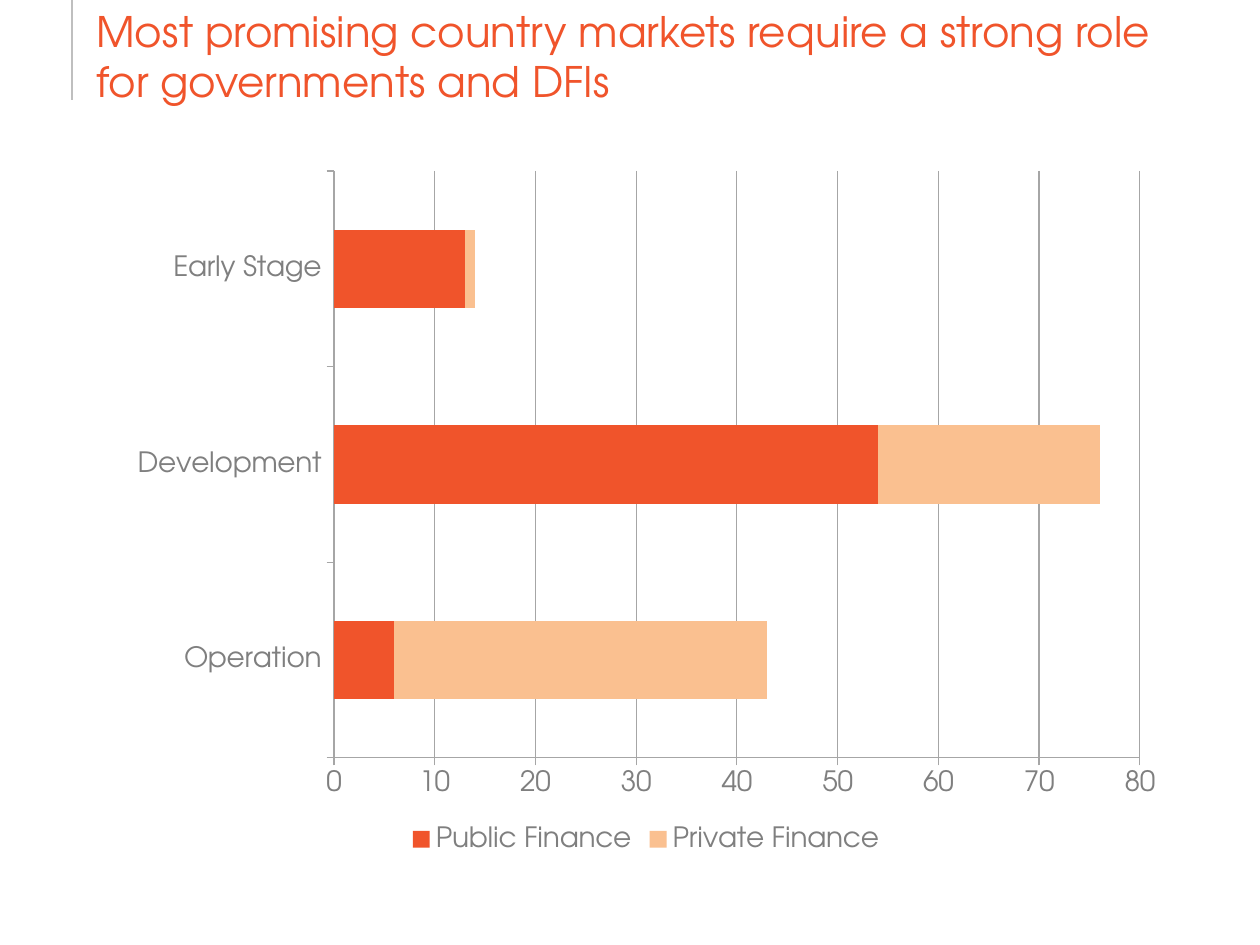
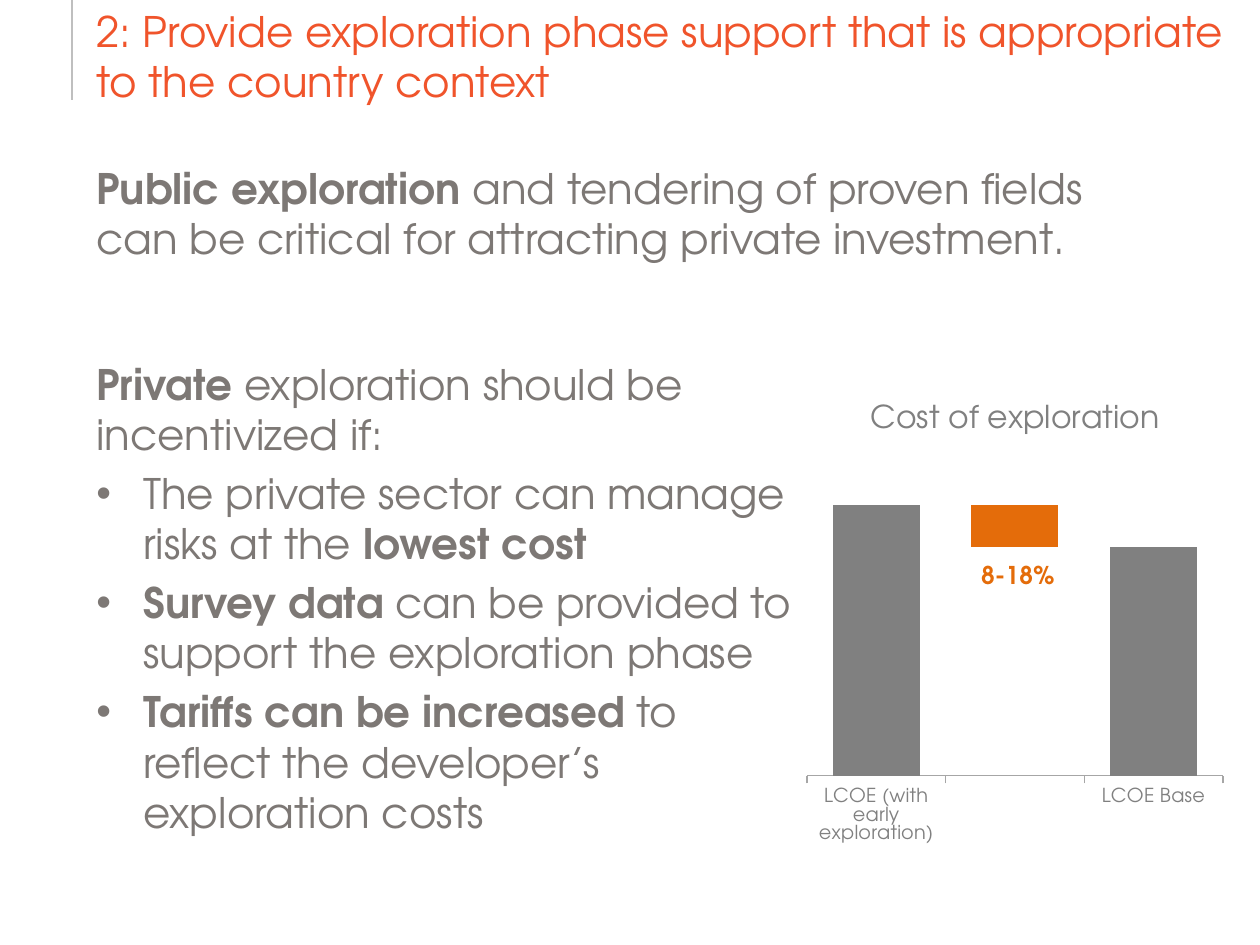
from dataclasses import dataclass

from lxml.etree import SubElement
from pptx import Presentation
from pptx.chart.data import CategoryChartData
from pptx.dml.color import RGBColor
from pptx.enum.chart import XL_CHART_TYPE as ChartType
from pptx.enum.chart import XL_LABEL_POSITION as LabelPosition
from pptx.enum.chart import XL_LEGEND_POSITION as LegendPosition
from pptx.enum.chart import XL_TICK_MARK as TickMark
from pptx.enum.shapes import MSO_CONNECTOR as Connector
from pptx.enum.text import MSO_ANCHOR as Anchor
from pptx.oxml.ns import qn
from pptx.util import Emu, Pt


@dataclass(frozen=True)
class Theme:
    font: str = "TeX Gyre Adventor"
    accent: str = "F0542B"
    peach: str = "FAC090"
    orange: str = "E46C0A"
    body: str = "7D7875"
    label: str = "7F7F7F"
    column: str = "808080"
    rule: str = "BFBFBF"
    grid: str = "A6A6A6"
    text_size: float = 24
    chart_size: float = 16
    chart_title_size: float = 18
    callout_size: float = 14
    category_size: float = 11
    text_gap: float = 4.8


THEME = Theme()
EMU_PER_PX = 914400 / 126
FINANCE_FRAME = (116, 156, 1060, 702)
COST_FRAME = (798, 379, 433, 474)


def px(*lengths):
    return [Emu(round(length * EMU_PER_PX)) for length in lengths]


def rgb(color):
    return RGBColor.from_string(color)


def style_font(font, size, color, bold=False):
    font.name = THEME.font
    font.size = Pt(size)
    font.bold = bold
    font.color.rgb = rgb(color)


def add_text_box(page, frame):
    box = page.shapes.add_textbox(*px(*frame))
    box.text_frame.word_wrap = True
    return box.text_frame


def add_title(page, text, width):
    text_frame = add_text_box(page, (84, -5, width, 117))
    text_frame.vertical_anchor = Anchor.BOTTOM
    text_frame.text = text
    style_font(text_frame.paragraphs[0].runs[0].font, THEME.text_size, THEME.accent)


def add_rule(page):
    rule = page.shapes.add_connector(Connector.STRAIGHT, *px(72, 0, 72, 100))
    rule.line.color.rgb = rgb(THEME.rule)
    rule.line.width = Pt(1.25)
    SubElement(rule.element.spPr, qn("a:effectLst"))


def add_page(deck, title, title_width):
    page = deck.slides.add_slide(deck.slide_layouts[6])
    add_rule(page)
    add_title(page, title, title_width)
    return page


def add_bullet(para):
    properties = para._p.get_or_add_pPr()
    indent = px(47)[0]
    properties.set("marL", str(indent))
    properties.set("indent", str(-indent))
    SubElement(properties, qn("a:buFont"), typeface="Arial")
    SubElement(properties, qn("a:buChar"), char="•")


def add_body(page, frame, lead, bullets=()):
    text_frame = add_text_box(page, frame)
    for index, pieces in enumerate([lead, *bullets]):
        para = text_frame.add_paragraph() if index else text_frame.paragraphs[0]
        para.space_before = Pt(THEME.text_gap)
        if index:
            add_bullet(para)
        for text, bold in pieces:
            span = para.add_run()
            span.text = text
            style_font(span.font, THEME.text_size, THEME.body, bold)


def set_layout(parent, index, **settings):
    layout = parent.find(qn("c:layout"))
    if layout is None:
        layout = parent.makeelement(qn("c:layout"))
        parent.insert(index, layout)
    manual = SubElement(layout, qn("c:manualLayout"))
    for name, value in settings.items():
        SubElement(manual, qn(f"c:{name}"), val=str(value))


def add_stacked_chart(page, kind, frame, categories, series, gap, plot_area):
    data = CategoryChartData()
    data.categories = categories
    for name, values, _ in series:
        data.add_series(name, values)
    chart = page.shapes.add_chart(kind, *px(*frame), data).chart
    chart.has_title = False
    chart.has_legend = False
    style_font(chart.font, THEME.chart_size, THEME.label)
    plot = chart.plots[0]
    plot.gap_width, plot.overlap, plot.vary_by_categories = gap, 100, False
    for item, (_, _, color) in zip(plot.series, series):
        item.format.fill.solid()
        item.format.fill.fore_color.rgb = rgb(color)
        item.invert_if_negative = False
    for axis in (chart.category_axis, chart.value_axis):
        axis.major_tick_mark = TickMark.OUTSIDE
        axis.minor_tick_mark = TickMark.NONE
        axis.format.line.color.rgb = rgb(THEME.grid)
    chart.value_axis.minimum_scale = 0
    chart_left, chart_top, chart_width, chart_height = frame
    left, top, width, height = plot_area
    set_layout(chart.element.find(f".//{qn('c:plotArea')}"), 0, layoutTarget="inner",
               xMode="edge", yMode="edge",
               x=(left - chart_left) / chart_width, y=(top - chart_top) / chart_height,
               w=width / chart_width, h=height / chart_height)
    return chart


def add_finance_chart(page):
    chart = add_stacked_chart(
        page, ChartType.BAR_STACKED, FINANCE_FRAME,
        ["Operation", "Development", "Early Stage"],
        [("Public Finance", (6, 54, 13), THEME.accent),
         ("Private Finance", (37, 22, 1), THEME.peach)],
        150, (334, 171, 806, 587))
    axis = chart.value_axis
    axis.maximum_scale, axis.major_unit = 80, 10
    axis.has_major_gridlines = True
    axis.major_gridlines.format.line.color.rgb = rgb(THEME.grid)
    chart.has_legend = True
    chart.legend.position = LegendPosition.BOTTOM
    chart.legend.include_in_layout = False
    style_font(chart.legend.font, THEME.chart_size, THEME.label)


def add_chart_title(chart, text, left, top):
    text_frame = chart.chart_title.text_frame
    text_frame.text = text
    style_font(text_frame.paragraphs[0].runs[0].font, THEME.chart_title_size, THEME.column)
    title = chart.element.find(f".//{qn('c:title')}")
    _, _, width, height = COST_FRAME
    set_layout(title, 1, xMode="edge", yMode="edge", x=left / width, y=top / height)
    title.find(qn("c:overlay")).set("val", "1")


def add_callout(chart, series, point, text, right, down):
    label = series.points[point].data_label
    label.text_frame.text = text
    span = label.text_frame.paragraphs[0].runs[0]
    style_font(span.font, THEME.callout_size, THEME.orange, True)
    label.position = LabelPosition.CENTER
    labels = series.data_labels
    labels.show_value = True
    labels.position = LabelPosition.CENTER
    style_font(labels.font, THEME.callout_size, THEME.orange, True)
    for leader in chart.element.iter(qn("c:showLeaderLines")):
        leader.set("val", "0")
    _, _, width, height = COST_FRAME
    set_layout(chart.element.find(f".//{qn('c:dLbl')}"), 1, x=right / width, y=down / height)


def add_cost_chart(page):
    chart = add_stacked_chart(
        page, ChartType.COLUMN_STACKED, COST_FRAME,
        ["LCOE (with early exploration)", "", "LCOE Base"],
        [("Series 1", (118, 100, 100), THEME.column),
         ("Series 2", (None, 8, None), THEME.orange),
         ("Series 3", (None, 10, None), THEME.orange)],
        59, (807, 455, 416, 321))
    chart.value_axis.maximum_scale = 140
    chart.value_axis.has_major_gridlines = False
    chart.value_axis.visible = False
    style_font(chart.category_axis.tick_labels.font, THEME.category_size, THEME.column)
    base, _, saving = chart.plots[0].series
    base.points[1].format.fill.background()
    add_chart_title(chart, "Cost of exploration", 67, 16)
    add_callout(chart, saving, 1, "8-18%", 3, 61)


def main():
    deck = Presentation()
    deck.slide_width, deck.slide_height = px(1260, 945)

    markets = add_page(
        deck, "Most promising country markets require a strong role for governments and DFIs", 1092)
    add_finance_chart(markets)

    support = add_page(
        deck, "2: Provide exploration phase support that is appropriate to the country context", 1193)
    add_body(support, (84, 156, 1092, 716), [
        ("Public exploration ", True),
        ("and tendering of proven fields can be critical for attracting private investment.", False)])
    add_body(support, (84, 352, 731, 501), [
        ("Private ", True), ("exploration should be incentivized if:", False)], [
        [("The private sector can manage risks at the ", False), ("lowest cost", True)],
        [("Survey data ", True), ("can be provided to support the exploration phase", False)],
        [("Tariffs can be increased ", True),
         ("to reflect the developer’s exploration costs", False)]])
    add_cost_chart(support)

    deck.save("out.pptx")


if __name__ == "__main__":
    main()
